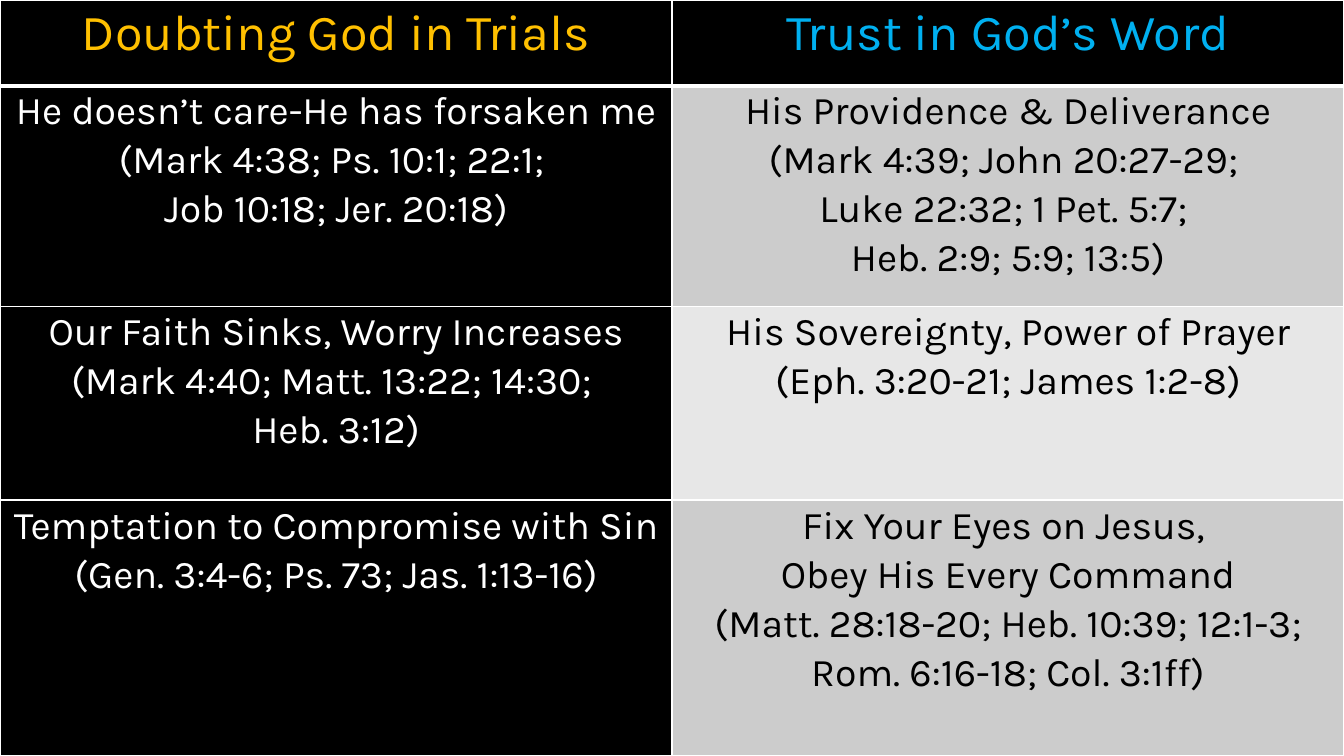
from lxml import etree
from pptx import Presentation
from pptx.dml.color import RGBColor
from pptx.enum import text
from pptx.oxml import ns
from pptx.util import Inches, Pt

BLACK = RGBColor(0, 0, 0)
WHITE = RGBColor(0xFF, 0xFF, 0xFF)
GOLD = RGBColor(0xFF, 0xC0, 0x00)
BLUE = RGBColor(0x00, 0xB0, 0xF0)
GREY = RGBColor(0xCC, 0xCC, 0xCC)
PALE = RGBColor(0xE7, 0xE7, 0xE7)

WIDTH, HEIGHT = 13.33, 7.5
ROWS = [0.85, 2.19, 1.92, 2.54]
HEADS = [("Doubting God in Trials", GOLD), ("Trust in God’s Word", BLUE)]
TRIALS = [
    ["He doesn’t care-He has forsaken me (Mark 4:38; Ps. 10:1; 22:1; ",
     "Job 10:18; Jer. 20:18)"],
    ["Our Faith Sinks, Worry Increases (Mark 4:40; Matt. 13:22; 14:30; ",
     "Heb. 3:12)"],
    ["Temptation to Compromise with Sin (Gen. 3:4-6; Ps. 73; Jas. 1:13-16)"],
]
TRUST = [
    ["His Providence & Deliverance", "(Mark 4:39; John 20:27-29; ",
     "Luke 22:32; 1 Pet. 5:7; ", "Heb. 2:9; 5:9; 13:5)"],
    ["His Sovereignty, Power of Prayer (Eph. 3:20-21; James 1:2-8)"],
    ["Fix Your Eyes on Jesus, ", "Obey His Every Command",
     "(Matt. 28:18-20; Heb. 10:39; 12:1-3; Rom. 6:16-18; Col. 3:1ff)"],
]


def write(frame, lines, size=28, color=WHITE):
    """Fill a text frame with centred paragraphs."""
    frame.word_wrap = True
    for i, line in enumerate(lines):
        para = frame.paragraphs[0] if i == 0 else frame.add_paragraph()
        para.alignment = text.PP_ALIGN.CENTER
        para.line_spacing = 1.07
        para.space_before = para.space_after = Pt(0)
        run = para.add_run()
        run.text = line
        run.font.name = "Karla"
        run.font.size = Pt(size)
        run.font.bold = False
        run.font.color.rgb = color


def edge(cell, top=1, base=1):
    """Draw the four white borders of a cell, widths in points."""
    props = cell._tc.get_or_add_tcPr()
    sides = [("lnL", 1), ("lnR", 1), ("lnT", top), ("lnB", base)]
    for i, (side, width) in enumerate(sides):
        line = etree.Element(ns.qn("a:" + side), w=str(Pt(width)))
        fill = etree.SubElement(line, ns.qn("a:solidFill"))
        etree.SubElement(fill, ns.qn("a:srgbClr"), val=str(WHITE))
        props.insert(i, line)


def fill_cell(cell, lines, fill, top=1, base=1, **style):
    """Set the margins, fill, borders and text of a cell."""
    cell.margin_left = cell.margin_right = Inches(0.07)
    cell.margin_top = cell.margin_bottom = 0
    cell.fill.solid()
    cell.fill.fore_color.rgb = fill
    edge(cell, top, base)
    write(cell.text_frame, lines, **style)


def add_grid(slide):
    """Add the two-column table and return it."""
    grid = slide.shapes.add_table(
        len(ROWS), 2, 0, 0, Inches(WIDTH), Inches(HEIGHT)).table
    for col in grid.columns:
        col.width = Inches(WIDTH / 2)
    for row, height in zip(grid.rows, ROWS):
        row.height = Inches(height)
    return grid


def main():
    """Build the slide and save it."""
    deck = Presentation()
    deck.slide_width, deck.slide_height = Inches(WIDTH), Inches(HEIGHT)
    slide = deck.slides.add_slide(deck.slide_layouts[6])
    slide.background.fill.solid()
    slide.background.fill.fore_color.rgb = BLACK
    grid = add_grid(slide)
    for col, (head, color) in enumerate(HEADS):
        fill_cell(grid.cell(0, col), [head], BLACK, base=3,
                  size=36, color=color)
    bands = zip(TRIALS, TRUST, [GREY, PALE, GREY])
    for row, (trial, trust, band) in enumerate(bands, 1):
        top = 3 if row == 1 else 1
        fill_cell(grid.cell(row, 0), trial, BLACK, top=top)
        fill_cell(grid.cell(row, 1), trust, band, top=top, color=BLACK)
    deck.save("out.pptx")


if __name__ == "__main__":
    main()
